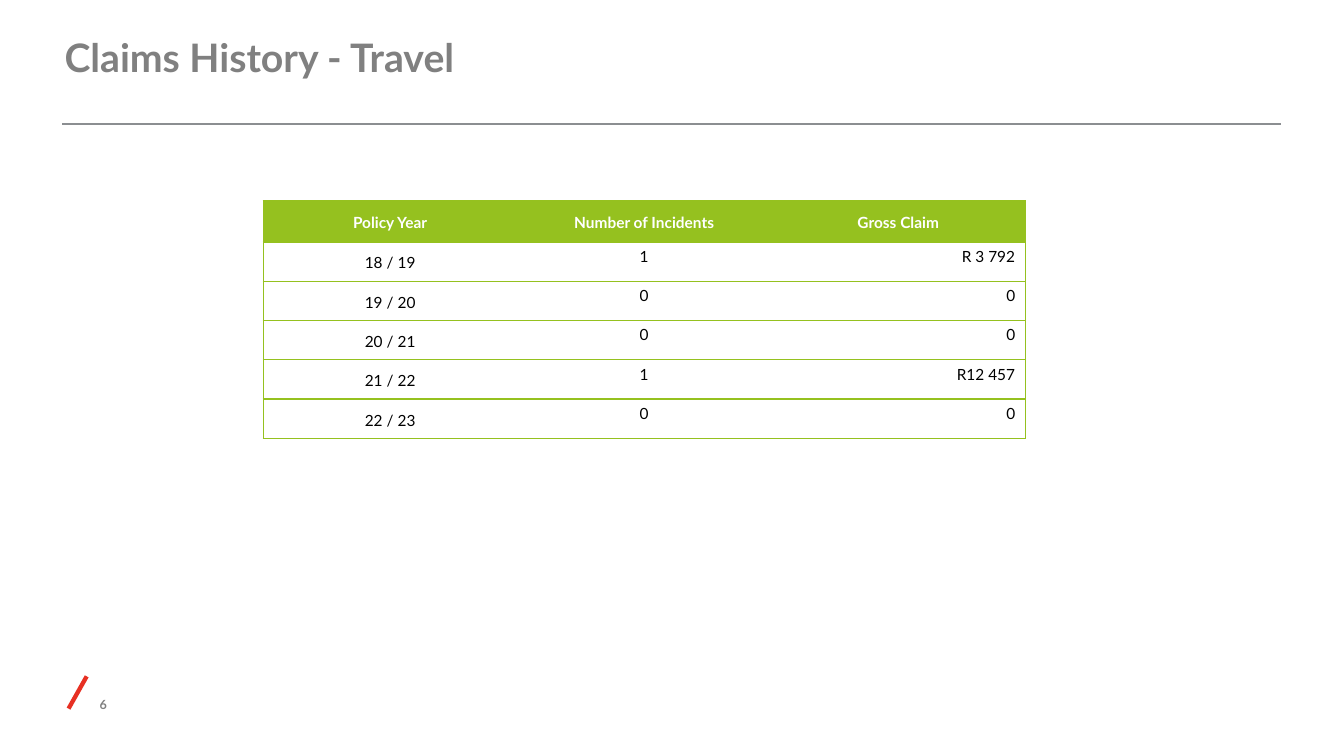
from pptx import Presentation
from pptx.dml.color import RGBColor
from pptx.enum.shapes import MSO_CONNECTOR
from pptx.enum.text import MSO_ANCHOR, PP_ALIGN
from pptx.oxml.ns import qn
from pptx.util import Inches, Pt
from lxml.etree import SubElement

GREEN = RGBColor(0x95, 0xC1, 0x1F)
GREY = RGBColor(0x80, 0x80, 0x80)
RULE = RGBColor(0x8B, 0x8E, 0x91)
RED = RGBColor(0xE7, 0x30, 0x23)
WHITE = RGBColor(0xFF, 0xFF, 0xFF)
BLACK = RGBColor(0, 0, 0)

CLAIMS = [
    ("Policy Year", "Number of Incidents", "Gross Claim"),
    ("18 / 19", "1", "R 3 792"),
    ("19 / 20", "0", "0"),
    ("20 / 21", "0", "0"),
    ("21 / 22", "1", "R12 457"),
    ("22 / 23", "0", "0"),
]


def set_all(item, values):
    for name, value in values.items():
        setattr(item, name, value)


def style(para, size, color, bold, align):
    para.alignment = align
    set_all(para.font, {"name": "Lato", "size": Pt(size), "bold": bold})
    para.font.color.rgb = color


def add_text(slide, text, box, size, align, anchor, bottom=0):
    frame = slide.shapes.add_textbox(*map(Inches, box)).text_frame
    set_all(frame, {
        "word_wrap": True, "vertical_anchor": anchor,
        "margin_left": 0, "margin_right": 0,
        "margin_top": 0, "margin_bottom": Inches(bottom),
    })
    frame.text = text
    style(frame.paragraphs[0], size, GREY, True, align)


def add_line(slide, ends, color, width):
    line = slide.shapes.add_connector(MSO_CONNECTOR.STRAIGHT, *map(Inches, ends))
    line.line.color.rgb = color
    line.line.width = Pt(width)
    SubElement(line._element.spPr, qn("a:effectLst"))


def set_edges(cell, shown):
    props = cell._tc.get_or_add_tcPr()
    for side in "LRTB":
        edge = SubElement(props, qn(f"a:ln{side}"), w=str(Pt(1)))
        if side in shown:
            fill = SubElement(edge, qn("a:solidFill"))
            SubElement(fill, qn("a:srgbClr"), val=str(GREEN))
        else:
            SubElement(edge, qn("a:noFill"))


def fill_cell(cell, text, row, col):
    head = row == 0
    cell.text = text
    para = cell.text_frame.paragraphs[0]
    align = PP_ALIGN.RIGHT if col == 2 and not head else PP_ALIGN.CENTER
    style(para, 11, WHITE if head else BLACK, head, align)
    # Header and year cells sit in the middle of the row
    if head or col == 0:
        set_all(para, {"line_spacing": 1.15, "space_after": Pt(10)})
        set_all(cell, {
            "vertical_anchor": MSO_ANCHOR.MIDDLE,
            "margin_left": Inches(0.07), "margin_right": Inches(0.07),
            "margin_top": 0, "margin_bottom": 0,
        })
    set_edges(cell, ("LTB", "TB", "RTB")[col])
    cell.fill.solid()
    cell.fill.fore_color.rgb = GREEN if head else WHITE


def add_claims(slide):
    box = map(Inches, (2.61, 1.99, 7.56, 2.38))
    table = slide.shapes.add_table(len(CLAIMS), 3, *box).table
    set_all(table, {"first_row": False, "horz_banding": False})
    for row, texts in enumerate(CLAIMS):
        table.rows[row].height = Inches(0.39 if row else 0.41)
        for col, text in enumerate(texts):
            fill_cell(table.cell(row, col), text, row, col)


def main():
    deck = Presentation()
    set_all(deck, {"slide_width": Inches(13.33), "slide_height": Inches(7.5)})
    slide = deck.slides.add_slide(deck.slide_layouts[6])

    # Footer: page number and slash
    add_text(slide, "6", (0.49, 6.88, 0.57, 0.23), 9, PP_ALIGN.RIGHT,
             MSO_ANCHOR.BOTTOM, 0.05)
    add_line(slide, (0.68, 7.03, 0.86, 6.71), RED, 3.05)

    # Title and rule
    add_line(slide, (0.62, 1.23, 12.71, 1.23), RULE, 1.65)
    add_text(slide, "Claims History - Travel", (0.64, 0.17, 11.01, 0.79), 28,
             PP_ALIGN.LEFT, MSO_ANCHOR.MIDDLE)

    # Claims table
    add_claims(slide)
    deck.save("out.pptx")


if __name__ == "__main__":
    main()
